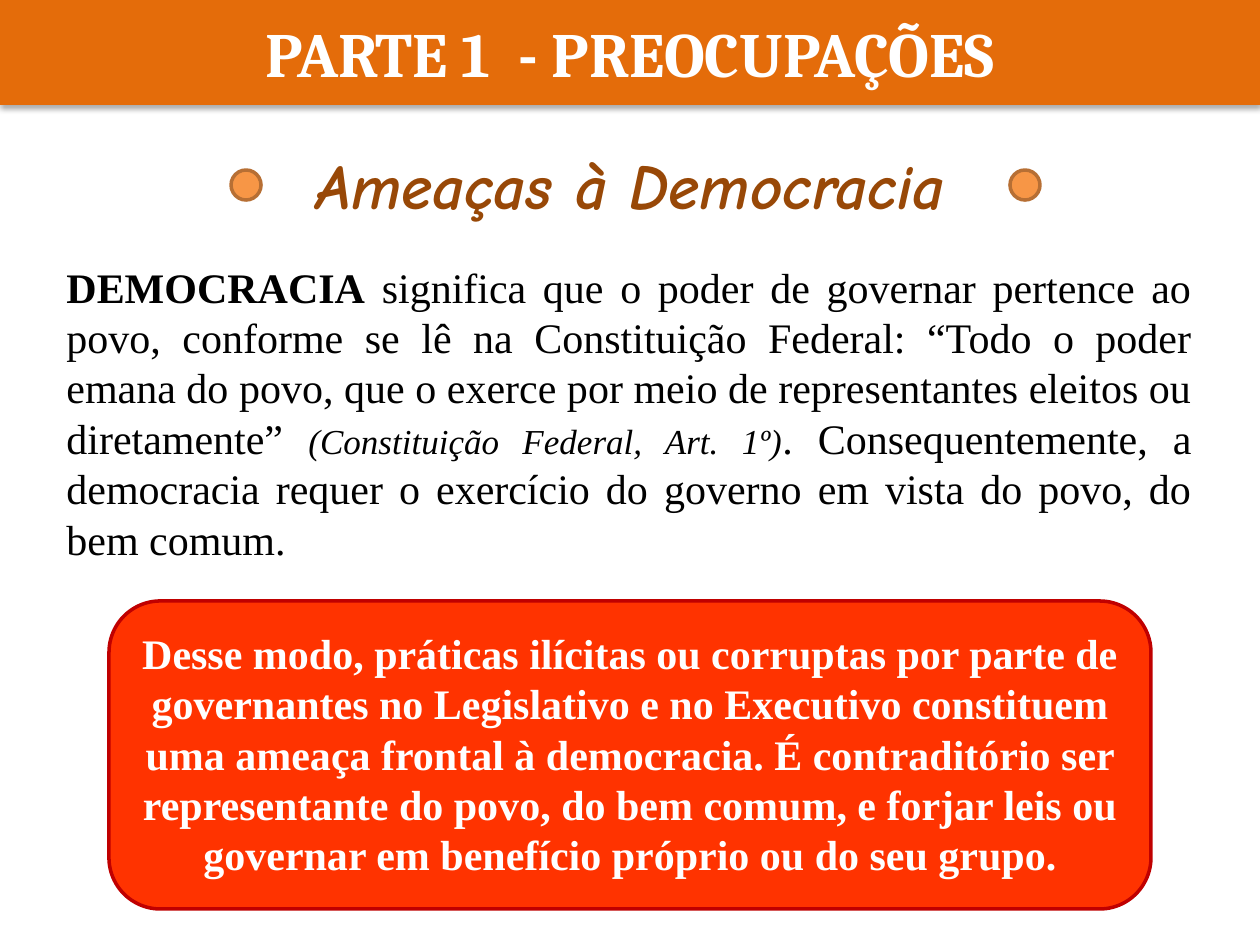
from lxml import etree
from pptx import Presentation
from pptx import util as u
from pptx.dml.color import RGBColor
from pptx.enum import shapes, text
from pptx.oxml import ns

SCALE = u.Inches(1) / 126
WHITE = RGBColor(0xFF, 0xFF, 0xFF)
BLACK = RGBColor(0, 0, 0)
ORANGE = RGBColor(0xE4, 0x6C, 0x0A)
BROWN = RGBColor(0x98, 0x48, 0x07)
DOT_FILL = RGBColor(0xF7, 0x96, 0x46)
DOT_LINE = RGBColor(0xB7, 0x6F, 0x34)
RED = RGBColor(0xFF, 0x33, 0x00)
DARK_RED = RGBColor(0xC0, 0, 0)
SERIF = "Times New Roman"


def px(length):
    return u.Emu(round(length * SCALE))


def place(item, box):
    item.left, item.top, item.width, item.height = map(px, box)


def add_shape(page, preset, box, fill, line=None):
    shape = page.shapes.add_shape(preset, *map(px, box))
    shape.shadow.inherit = False
    shape.fill.solid()
    shape.fill.fore_color.rgb = fill
    if line is None:
        shape.line.fill.background()
    else:
        shape.line.color.rgb = line
        shape.line.width = u.Pt(2)
    return shape


def add_shadow(shape):
    effects = shape._element.spPr.find(ns.qn("a:effectLst"))
    shadow = etree.SubElement(
        effects, ns.qn("a:outerShdw"), blurRad=str(u.Pt(3.5)),
        dist=str(u.Pt(2.2)), dir="5400000", rotWithShape="0")
    color = etree.SubElement(shadow, ns.qn("a:srgbClr"), val="000000")
    etree.SubElement(color, ns.qn("a:alpha"), val="32000")


def write(frame, align, font, color, spans):
    frame.word_wrap = True
    frame.auto_size = text.MSO_AUTO_SIZE.NONE
    frame.vertical_anchor = text.MSO_ANCHOR.TOP
    para = frame.paragraphs[0]
    para.alignment = align
    for words, size, bold, italic in spans:
        span = para.add_run()
        span.text = words
        span.font.name = font
        span.font.size = u.Pt(size)
        span.font.bold = bold
        span.font.italic = italic
        span.font.color.rgb = color


def add_text(page, box, align, font, color, spans):
    label = page.shapes.add_textbox(*map(px, box))
    write(label.text_frame, align, font, color, spans)


def header(page, box):
    left, top, width, height = box
    band = add_shape(page, shapes.MSO_SHAPE.RECTANGLE, box, ORANGE)
    add_shadow(band)
    title = page.shapes.title
    place(title, (left, top + 8, width, height - 16))
    write(title.text_frame, text.PP_ALIGN.CENTER, "Cambria", WHITE,
          [("PARTE 1  - PREOCUPAÇÕES", 36, True, False)])
    band._element.addnext(title._element)


def subtitle(page, box):
    left, top, width, height = box
    dot = 30
    add_text(page, (left + 37, top, width - 84, height),
             text.PP_ALIGN.CENTER, "Comic Neue", BROWN,
             [("Ameaças à Democracia", 36, True, True)])
    for dot_left in (left, left + width - dot):
        add_shape(page, shapes.MSO_SHAPE.OVAL,
                  (dot_left, top + 30, dot, dot), DOT_FILL, DOT_LINE)


def definition(page, box):
    add_text(page, box, text.PP_ALIGN.JUSTIFY, SERIF, BLACK, [
        ("DEMOCRACIA", 24, True, False),
        (" significa que o poder de governar pertence ao povo, conforme se lê "
         "na Constituição Federal: “Todo o poder emana do povo, que o exerce "
         "por meio de representantes eleitos ou diretamente” ",
         24, False, False),
        ("(Constituição Federal, Art. 1º)", 20, False, True),
        (". Consequentemente, a democracia requer o exercício do governo em "
         "vista do povo, do bem comum.", 24, False, False),
    ])


def warning(page, box):
    left, top, width, height = box
    add_shape(page, shapes.MSO_SHAPE.ROUNDED_RECTANGLE, box, RED, DARK_RED)
    add_text(page, (left, top + 20, width, height - 40),
             text.PP_ALIGN.CENTER, SERIF, WHITE, [
        ("Desse modo, práticas ilícitas ou corruptas por parte de governantes "
         "no Legislativo e no Executivo constituem uma ameaça frontal à "
         "democracia. É contraditório ser representante do povo, do bem comum, "
         "e forjar leis ou governar em benefício próprio ou do seu grupo.",
         24, True, False)])


def main():
    deck = Presentation()
    deck.slide_width, deck.slide_height = px(1260), px(945)
    page = deck.slides.add_slide(deck.slide_layouts[5])
    subtitle(page, (231, 140, 809, 89))
    header(page, (0, 0, 1260, 105))
    definition(page, (54, 255, 1150, 318))
    warning(page, (109, 601, 1042, 308))
    deck.save("out.pptx")


if __name__ == "__main__":
    main()
